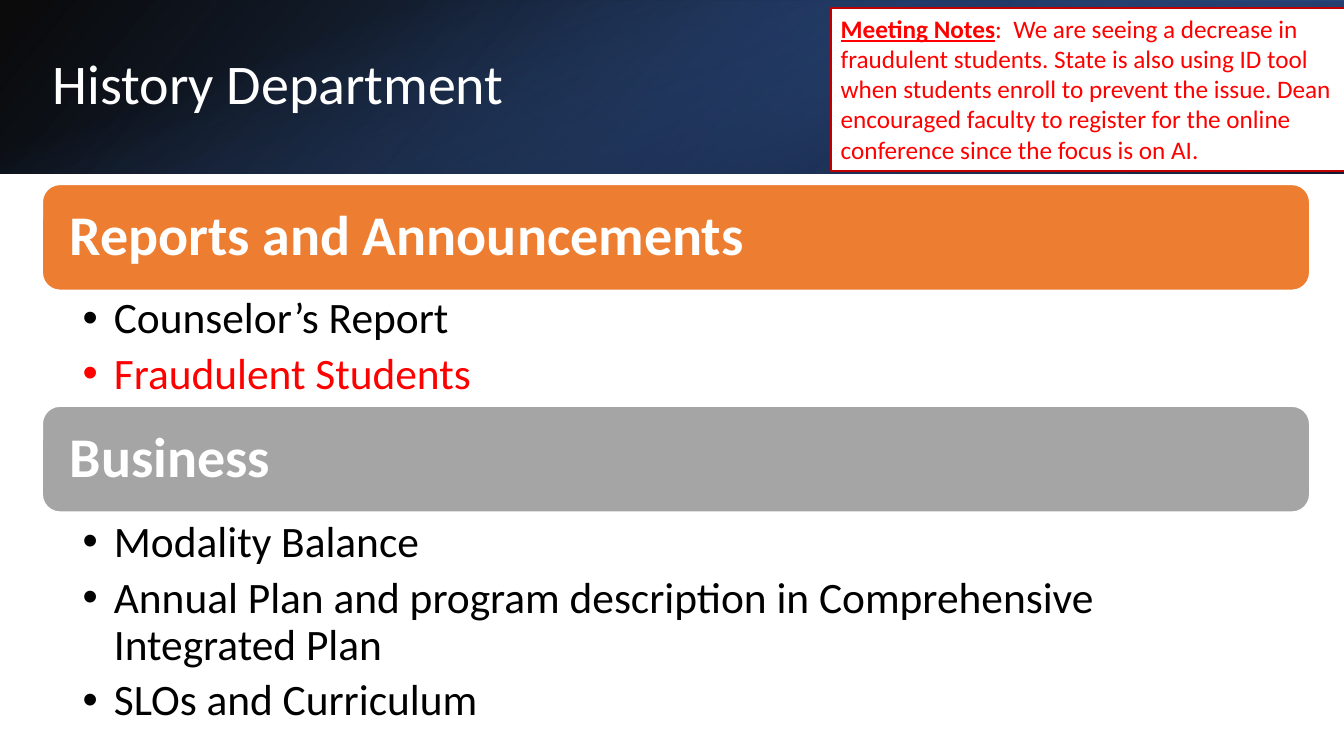
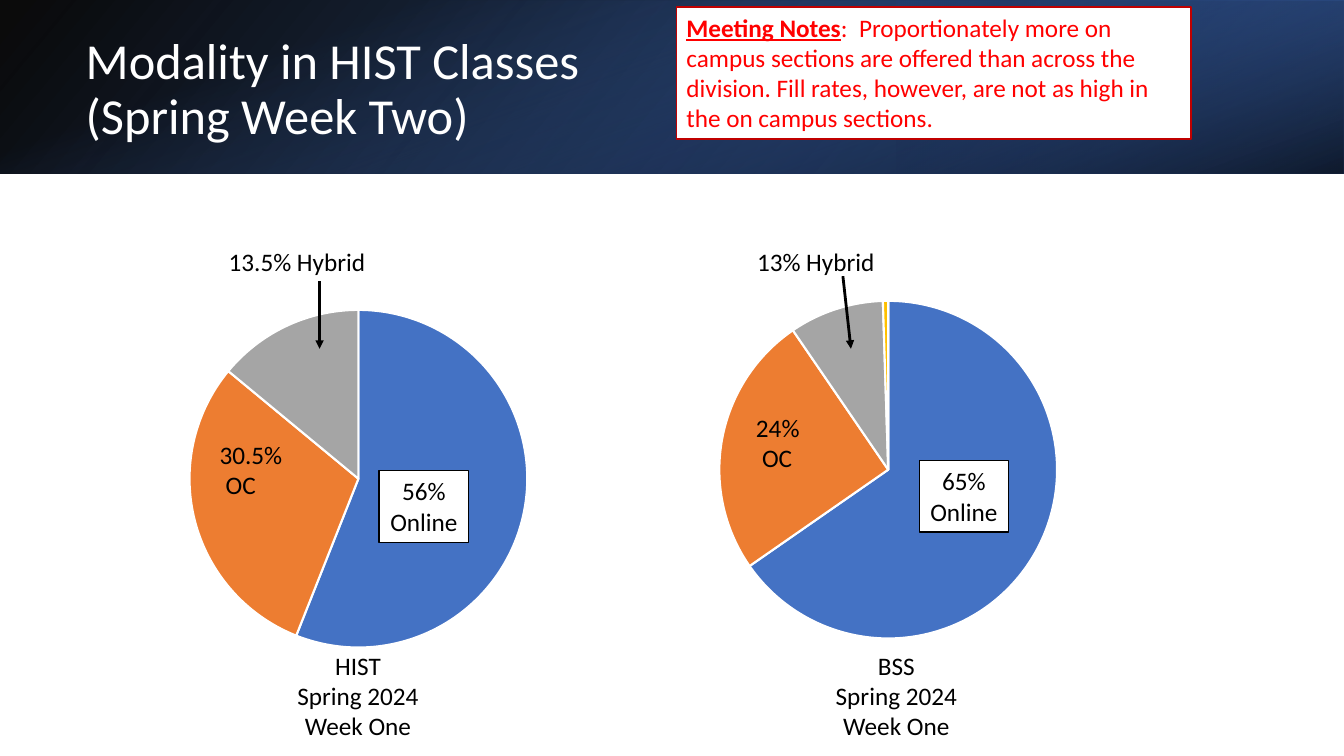
from pptx import Presentation, util as u
from pptx.chart.data import CategoryChartData
from pptx.dml.color import RGBColor
from pptx.enum import chart as charts, shapes, text
from pptx.oxml.ns import qn
from lxml import etree

COLORS = {
    "white": "FFFFFF", "black": "000000", "red": "FF0000", "dark red": "C00000",
    "blue": "4472C4", "mid blue": "2F5597", "navy": "203864",
    "orange": "ED7D31", "gray": "A5A5A5", "gold": "FFC000",
}
SLICES = ["blue", "orange", "gray", "gold"]
# Frame, rotation, mirrored, gradient angle, (position, colour, opacity %) stops
BANDS = [
    ((0, 0, 13.33, 1.72), 0, True, 140, [(0, "black", 96), (1, "mid blue", 100)]),
    ((8.89, 0, 4.44, 1.72), 180, True, 320, [(0.19, "navy", 68), (1, "blue", 79)]),
    ((5.8, -5.8, 1.72, 13.33), 90, False, 340, [(0.23, "blue", 0), (0.99, "black", 74)]),
]
LEFT, CENTER = text.PP_ALIGN.LEFT, text.PP_ALIGN.CENTER
RECT, ROUNDED = shapes.MSO_SHAPE.RECTANGLE, shapes.MSO_SHAPE.ROUNDED_RECTANGLE


def rgb(name):
    return RGBColor.from_string(COLORS[name])


def inches(lengths):
    return [u.Inches(length) for length in lengths]


class Deck:
    FONT = "Calibri"

    def __init__(self):
        self.prs = Presentation()
        self.prs.slide_width, self.prs.slide_height = inches((13.33, 7.5))
        self.slide = None

    def new_slide(self, title_lines, frame, size):
        self.slide = self.prs.slides.add_slide(self.prs.slide_layouts[5])
        for band in BANDS:
            self.band(*band)
        title = self.slide.shapes.title
        self.slide.shapes._spTree.append(title._element)
        title.left, title.top, title.width, title.height = inches(frame)
        title.text_frame.auto_size = text.MSO_AUTO_SIZE.NONE
        title.text_frame.vertical_anchor = text.MSO_ANCHOR.MIDDLE
        paragraph = title.text_frame.paragraphs[0]
        paragraph.alignment, paragraph.line_spacing = LEFT, 0.9
        for number, line in enumerate(title_lines):
            if number:
                paragraph.add_line_break()
            self.run(paragraph, line, size, "white")

    def band(self, frame, rotation, mirrored, angle, stops):
        band = self.box(frame)
        band.rotation = rotation
        if mirrored:
            band._element.spPr.xfrm.set("flipH", "1")
        band.fill.gradient()
        band.fill.gradient_angle = 360 - angle
        for stop, (position, color, _) in zip(band.fill.gradient_stops, stops):
            stop.position, stop.color.rgb = position, rgb(color)
        tints = band._element.spPr.iter(qn("a:srgbClr"))
        for tint, (_, _, opacity) in zip(tints, stops):
            etree.SubElement(tint, qn("a:alpha")).set("val", str(opacity * 1000))

    def box(self, frame, fill=None, line=None, width=1, kind=RECT):
        box = self.slide.shapes.add_shape(kind, *inches(frame))
        box.shadow.inherit = False
        if fill:
            box.fill.solid()
            box.fill.fore_color.rgb = rgb(fill)
        if line:
            box.line.color.rgb = rgb(line)
            box.line.width = u.Pt(width)
        else:
            box.line.fill.background()
        return box

    def text_box(self, frame):
        return self.slide.shapes.add_textbox(*inches(frame))

    def run(self, paragraph, words, size, color, bold=False, underline=False):
        run = paragraph.add_run()
        run.text = words
        font = run.font
        font.name, font.size, font.color.rgb = self.FONT, u.Pt(size), rgb(color)
        font.bold, font.underline = bold, underline

    def lines(self, holder, lines, size=18, color="black", align=CENTER, wrap=False, bold=False):
        """Write one paragraph per line and return the paragraphs."""
        frame = holder.text_frame
        frame.word_wrap = wrap
        frame.vertical_anchor = text.MSO_ANCHOR.TOP
        for number, line in enumerate(lines):
            paragraph = frame.add_paragraph() if number else frame.paragraphs[0]
            paragraph.alignment = align
            self.run(paragraph, line, size, color, bold)
        return frame.paragraphs

    def meeting_notes(self, frame, notes):
        box = self.box(frame, "white", "dark red", 1.25)
        paragraph = self.lines(box, ["Meeting Notes"], color="red", align=LEFT, wrap=True, bold=True)[0]
        paragraph.runs[0].font.underline = True
        self.run(paragraph, ":  " + notes, 18, "red")

    def heading(self, words, top, fill):
        bar = self.box((0.42, top, 12.57, 1.05), fill, "white", kind=ROUNDED)
        self.lines(bar, [words], 40, "white", LEFT, True, True)[0].line_spacing = 0.9
        bar.text_frame.vertical_anchor = text.MSO_ANCHOR.MIDDLE
        bar.text_frame.margin_left = u.Inches(0.22)

    def bullets(self, items, top, height, highlight=None):
        box = self.text_box((0.42, top, 12.57, height))
        frame = box.text_frame
        frame.margin_left = frame.margin_right = u.Inches(0.4)
        frame.margin_top = frame.margin_bottom = u.Inches(0.06)
        for paragraph in self.lines(box, items, 31, align=LEFT, wrap=True):
            paragraph.line_spacing, paragraph.space_after = 0.9, u.Pt(6.2)
            props = paragraph._p.get_or_add_pPr()
            props.set("marL", str(u.Inches(0.31)))
            props.set("indent", str(-u.Inches(0.31)))
            etree.SubElement(props, qn("a:buFont")).set("typeface", "Arial")
            etree.SubElement(props, qn("a:buChar")).set("char", "•")
            if paragraph.text == highlight:
                paragraph.runs[0].font.color.rgb = rgb("red")

    def pie(self, frame, values, diameter=3.35):
        data = CategoryChartData()
        data.categories = [str(number + 1) for number in range(len(values))]
        data.add_series("Series 1", values)
        chart = self.slide.shapes.add_chart(charts.XL_CHART_TYPE.PIE, *inches(frame), data).chart
        chart.has_legend = chart.has_title = False
        chart.font.name, chart.font.size = self.FONT, u.Pt(10)
        chart.font.color.rgb = rgb("black")
        chart.plots[0].vary_by_categories = True
        for number, color in enumerate(SLICES[:len(values)]):
            look = chart.plots[0].series[0].points[number].format
            look.fill.solid()
            look.fill.fore_color.rgb = rgb(color)
            look.line.color.rgb = rgb("white")
            look.line.width = u.Pt(1.5)
        self.center_plot(chart, diameter / frame[2], diameter / frame[3])

    def center_plot(self, chart, width, height):
        plot_area = chart._chartSpace.chart.plotArea
        for old in plot_area.findall(qn("c:layout")):
            plot_area.remove(old)
        layout = etree.Element(qn("c:layout"))
        plot_area.insert(0, layout)
        manual = etree.SubElement(layout, qn("c:manualLayout"))
        settings = {
            "layoutTarget": "inner", "xMode": "edge", "yMode": "edge",
            "x": (1 - width) / 2, "y": (1 - height) / 2, "w": width, "h": height,
        }
        for tag, value in settings.items():
            etree.SubElement(manual, qn("c:" + tag)).set("val", str(value))

    def arrow(self, start, end):
        arrow = self.slide.shapes.add_connector(
            shapes.MSO_CONNECTOR.STRAIGHT, *inches(start + end))
        arrow.line.color.rgb = rgb("black")
        arrow.line.width = u.Pt(2)
        etree.SubElement(arrow.line._get_or_add_ln(), qn("a:tailEnd")).set("type", "triangle")
        etree.SubElement(arrow._element.spPr, qn("a:effectLst"))

    def modality(self, group, frame, values, online, campus, hybrid, arrow, caption_left):
        """Draw a pie with its three share labels, arrow and caption."""
        self.pie(frame, values)
        share, place = online
        self.lines(self.box(place, "white", "black"), [share, "Online"])
        share, place = campus
        label = self.lines(self.text_box(place), [share, "OC"], align=LEFT, wrap=True)
        label[1]._p.get_or_add_pPr().set("marL", str(u.Inches(0.06)))
        share, place = hybrid
        self.lines(self.text_box(place), [share + " Hybrid"], align=LEFT)
        self.arrow(*arrow)
        caption = self.text_box((caption_left, 6.4, 1.42, 1.01))
        self.lines(caption, [group, "Spring 2024", "Week One"])


def main():
    deck = Deck()

    deck.new_slide(["History Department"], (0.42, 0.38, 10.98, 0.96), 40)
    deck.heading("Reports and Announcements", 1.83, "orange")
    deck.bullets(["Counselor’s Report", "Fraudulent Students"], 2.88, 1.18, "Fraudulent Students")
    deck.heading("Business", 4.03, "gray")
    deck.bullets([
        "Modality Balance",
        "Annual Plan and program description in Comprehensive Integrated Plan",
        "SLOs and Curriculum",
    ], 5.1, 2.22)
    deck.meeting_notes(
        (8.24, 0.08, 5.1, 1.62),
        "We are seeing a decrease in fraudulent students. State is also using ID tool "
        "when students enroll to prevent the issue. Dean encouraged faculty to register "
        "for the online conference since the focus is on AI.")

    deck.new_slide(["Modality in HIST Classes", "(Spring Week Two)"], (0.75, 0.42, 7.39, 0.96), 36)
    deck.modality(
        "BSS", (6.87, 2.84, 3.88, 3.64), [65, 25, 9, 0.5],
        online=("65%", (9.12, 4.57, 0.88, 0.71)),
        campus=("24%", (7.4, 4.04, 0.7, 0.71)),
        hybrid=("13%", (7.41, 2.39, 1.38, 0.4)),
        arrow=((8.36, 2.74), (8.44, 3.46)), caption_left=8.18)
    deck.modality(
        "HIST", (1.3, 2.93, 4.51, 3.64), [56, 30, 14],
        online=("56%", (3.76, 4.67, 0.89, 0.71)),
        campus=("30.5%", (2.08, 4.31, 0.89, 0.71)),
        hybrid=("13.5%", (2.17, 2.39, 1.57, 0.4)),
        arrow=((3.17, 2.79), (3.17, 3.46)), caption_left=2.84)
    deck.meeting_notes(
        (6.71, 0.07, 5.1, 1.31),
        "Proportionately more on campus sections are offered than across the division. "
        "Fill rates, however, are not as high in the on campus sections.")

    deck.prs.save("out.pptx")


if __name__ == "__main__":
    main()
